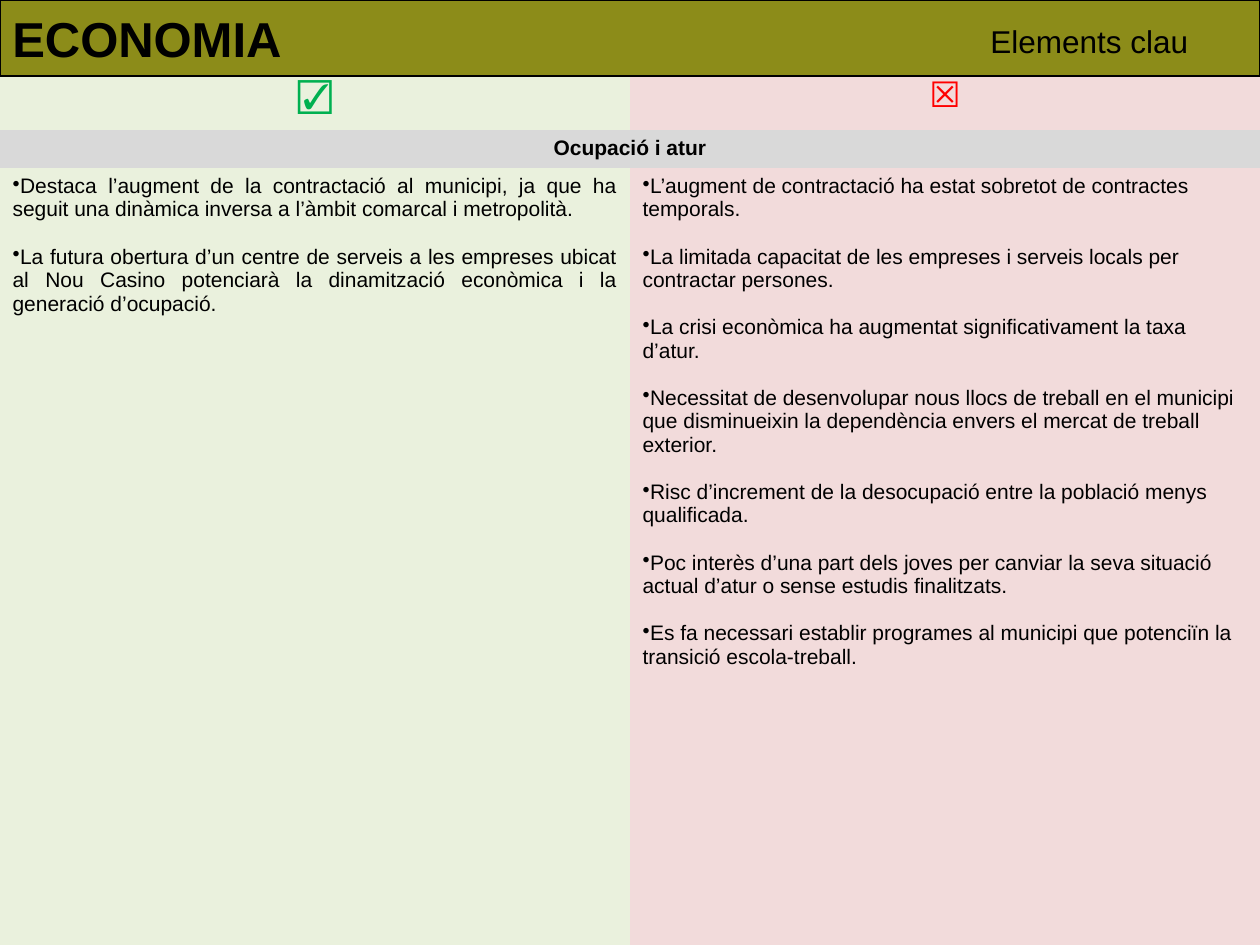
from dataclasses import dataclass

from lxml.etree import SubElement
from pptx import Presentation
from pptx.dml.color import RGBColor
from pptx.enum.shapes import MSO_SHAPE
from pptx.enum.text import MSO_ANCHOR, PP_ALIGN
from pptx.oxml.ns import qn
from pptx.util import Pt

EMU_PER_INCH = 914400
PX_PER_INCH = 126
PAGE_WIDTH, PAGE_HEIGHT = 1260, 945
HEADER_HEIGHT = 76
ROW_HEIGHTS = (54, 38, 777)
PLAIN_TABLE_STYLE = "{2D5ABB26-0587-4C30-8999-92F81FD0307C}"


@dataclass(frozen=True)
class Theme:
    font: str = "Arial"
    symbol_font: str = "Arial Narrow"
    ink: str = "000000"
    olive: str = "808000"
    strength: str = "EAF1DD"
    weakness: str = "F2DBDB"
    section: str = "D9D9D9"
    check: str = "00B050"
    cross: str = "FF0000"
    title_size: int = 28
    symbol_size: int = 20
    subtitle_size: int = 18
    body_size: int = 12
    bullet_gap: float = 13.5


THEME = Theme()

STRENGTHS = (
    "Destaca l’augment de la contractació al municipi, ja que ha seguit una "
    "dinàmica inversa a l’àmbit comarcal i metropolità.",
    "La futura obertura d’un centre de serveis a les empreses ubicat al Nou Casino "
    "potenciarà la dinamització econòmica i la generació d’ocupació.",
)
WEAKNESSES = (
    "L’augment de contractació ha estat sobretot de contractes temporals.",
    "La limitada capacitat de les empreses i serveis locals per contractar persones.",
    "La crisi econòmica ha augmentat significativament la taxa d’atur.",
    "Necessitat de desenvolupar nous llocs de treball en el municipi que "
    "disminueixin la dependència envers el mercat de treball exterior.",
    "Risc d’increment de la desocupació entre la població menys qualificada.",
    "Poc interès d’una part dels joves per canviar la seva situació actual d’atur "
    "o sense estudis finalitzats.",
    "Es fa necessari establir programes al municipi que potenciïn la transició "
    "escola-treball.",
)


def px(length):
    return round(length * EMU_PER_INCH / PX_PER_INCH)


def fill_solid(target, color):
    target.fill.solid()
    target.fill.fore_color.rgb = RGBColor.from_string(color)


def add_span(para, text, size, color=THEME.ink, font=THEME.font, bold=False):
    span = para.add_run()
    span.text = text
    span.font.size = Pt(size)
    span.font.name = font
    span.font.bold = bold
    span.font.color.rgb = RGBColor.from_string(color)


def add_bullets(cell, items, alignment):
    frame = cell.text_frame
    for index, item in enumerate(items):
        para = frame.add_paragraph() if index else frame.paragraphs[0]
        para.alignment = alignment
        if index:
            para.space_before = Pt(THEME.bullet_gap)
        properties = para._p.get_or_add_pPr()
        properties.set("marL", "0")
        properties.set("indent", "0")
        SubElement(properties, qn("a:buChar"), char="•")
        add_span(para, item, THEME.body_size)


def add_centred(cell, text, size, **style):
    para = cell.text_frame.paragraphs[0]
    para.alignment = PP_ALIGN.CENTER
    add_span(para, text, size, **style)


def add_balance_table(page):
    frame = page.shapes.add_table(
        len(ROW_HEIGHTS), 2, 0, px(HEADER_HEIGHT), px(PAGE_WIDTH), px(sum(ROW_HEIGHTS))
    )
    table = frame.table
    table.first_row = table.horz_banding = False
    table._tbl.tblPr.find(qn("a:tableStyleId")).text = PLAIN_TABLE_STYLE
    for row, height in zip(table.rows, ROW_HEIGHTS):
        row.height = px(height)

    # One column for each side of the balance
    columns = (
        (THEME.strength, "☑", THEME.check, STRENGTHS, PP_ALIGN.JUSTIFY),
        (THEME.weakness, "☒", THEME.cross, WEAKNESSES, PP_ALIGN.LEFT),
    )
    for column, (background, symbol, color, items, alignment) in enumerate(columns):
        heading, body = table.cell(0, column), table.cell(2, column)
        fill_solid(heading, background)
        fill_solid(body, background)
        add_centred(heading, symbol, THEME.symbol_size,
                    color=color, font=THEME.symbol_font)
        add_bullets(body, items, alignment)

    # Section band across both columns
    band = table.cell(1, 0)
    band.merge(table.cell(1, 1))
    fill_solid(band, THEME.section)
    add_centred(band, "Ocupació i atur", THEME.body_size, bold=True)


def add_header(page, title):
    bar = page.shapes.add_shape(
        MSO_SHAPE.RECTANGLE, 0, 0, px(PAGE_WIDTH), px(HEADER_HEIGHT)
    )
    bar.shadow.inherit = False
    fill_solid(bar, THEME.olive)
    color = bar._element.spPr.find(qn("a:solidFill")).find(qn("a:srgbClr"))
    SubElement(color, qn("a:alpha"), val="90000")
    bar.line.color.rgb = RGBColor.from_string(THEME.ink)
    bar.line.width = Pt(0.75)
    frame = bar.text_frame
    frame.word_wrap = False
    frame.vertical_anchor = MSO_ANCHOR.MIDDLE
    para = frame.paragraphs[0]
    para.alignment = PP_ALIGN.LEFT
    add_span(para, title, THEME.title_size, bold=True)


def add_subtitle(page, text):
    box = page.shapes.add_textbox(px(978), px(16), px(282), px(51))
    box.text_frame.word_wrap = True
    add_span(box.text_frame.paragraphs[0], text, THEME.subtitle_size)


def main():
    deck = Presentation()
    deck.slide_width, deck.slide_height = px(PAGE_WIDTH), px(PAGE_HEIGHT)
    page = deck.slides.add_slide(deck.slide_layouts[6])
    add_balance_table(page)
    add_header(page, "ECONOMIA")
    add_subtitle(page, "Elements clau")
    deck.save("out.pptx")


if __name__ == "__main__":
    main()
